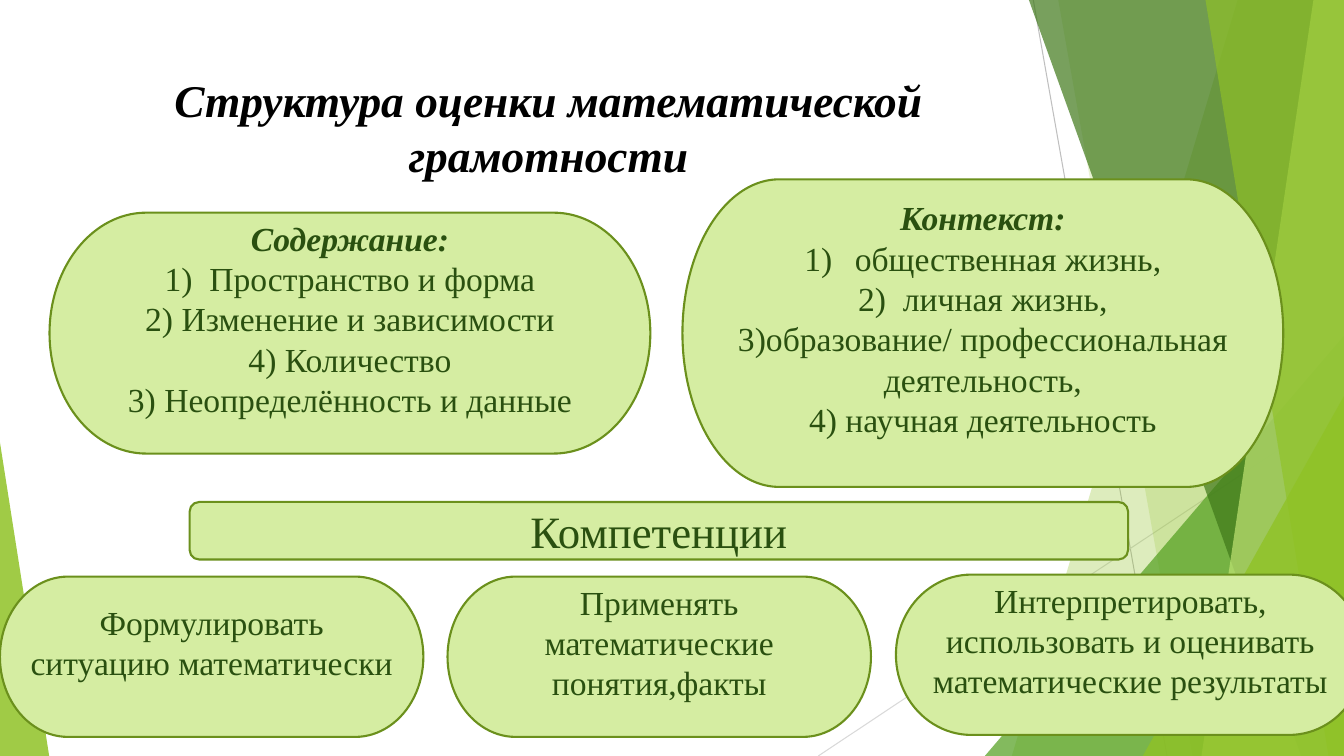
from lxml import etree
from pptx import Presentation
from pptx.dml.color import RGBColor
from pptx.enum import shapes, text
from pptx.oxml.ns import qn
from pptx.util import Cm, Pt

# Content
TITLE = "Структура оценки математической грамотности"
CONTENT = ["Содержание:", "1)  Пространство и форма", "2) Изменение и зависимости",
           "4) Количество", "3) Неопределённость и данные"]
CONTEXT = ["Контекст:", "общественная жизнь,", "2)  личная жизнь,",
           "3)образование/ профессиональная деятельность,", "4) научная деятельность"]
SKILLS = ["Формулировать ситуацию математически",
          "Применять математические понятия,факты",
          "Интерпретировать, использовать и оценивать математические результаты"]

# Geometry in cm
W, H = 33.87, 19.05
PILL = shapes.MSO_SHAPE.FLOWCHART_TERMINATOR
BAR = shapes.MSO_SHAPE.ROUNDED_RECTANGLE
LOW_SPACE = 0.87  # bottom inset that lifts the text in the pills
SKILL_BOXES = [(0, 14.53, 10.67, 4.04), (11.28, 14.53, 10.67, 4.04), (22.58, 14.48, 11.81, 4.04)]
BOXES = [  # preset, box, lines, size, heading, bottom inset
    (PILL, (1.25, 5.36, 15.14, 6.07), CONTENT, 24, True, LOW_SPACE),
    (PILL, (17.2, 4.52, 15.14, 7.75), CONTEXT, 24, True, LOW_SPACE),
    (BAR, (4.78, 12.65, 23.65, 1.45), ["Компетенции"], 32, False, 0.13),
] + [(PILL, box, [skill], 24, False, LOW_SPACE) for box, skill in zip(SKILL_BOXES, SKILLS)]

LINES = [((26.04, 0), (29.41, H), "BFBFBF"), ((W, 10.24), (20.62, H), "D9D9D9")]
# band: top x, bottom x; peak: left, top, width, apex side (0 left, 1 right)
DECOR = [
    ("band", (31.19, 25.5), "90C226", 30),
    ("band", (26.67, 30.05), "90C226", 20),
    ("peak", (24.82, 8.46, 9.05, 1), "54A021", 72),
    ("band", (25.93, 32.79), "3F7819", 70),
    ("band", (33.1, 30.28), "C0E474", 70),
    ("band", (30.38, 33.48), "90C226", 65),
    ("peak", (28.8, 9.98, 5.07, 1), "90C226", 80),
    ("peak", (0, 11.15, 1.24, 0), "90C226", 85),
]


def rgb(value):
    return RGBColor.from_string(value)


def put(obj, **values):
    for name, value in values.items():
        setattr(obj, name, value)


def paint(sp, color, alpha=None):
    sp.shadow.inherit = False
    sp.fill.solid()
    sp.fill.fore_color.rgb = rgb(color)
    if alpha is not None:
        clr = sp.fill._xPr.find(qn("a:solidFill"))[0]
        etree.SubElement(clr, qn("a:alpha")).set("val", str(alpha * 1000))


def write(p, words, size, color, strong):
    p.alignment = text.PP_ALIGN.CENTER
    r = p.add_run()
    r.text = words
    put(r.font, name="Times New Roman", size=Pt(size), bold=strong, italic=strong)
    r.font.color.rgb = rgb(color)


def number(p):
    pPr = p._p.get_or_add_pPr()
    pPr.set("marL", str(Cm(1.27)))
    pPr.set("indent", str(-Cm(1.27)))
    etree.SubElement(pPr, qn("a:buAutoNum")).set("type", "arabicParenR")


prs = Presentation()
put(prs, slide_width=Cm(W), slide_height=Cm(H))
s = prs.slides.add_slide(prs.slide_layouts[5])

# Background lines
for start, end, color in LINES:
    c = s.shapes.add_connector(shapes.MSO_CONNECTOR.STRAIGHT, *map(Cm, start + end))
    c.line.color.rgb = rgb(color)
    c.line.width = Pt(0.75)
    etree.SubElement(c._element.spPr, qn("a:effectLst"))

# Green bands and peaks
for kind, place, color, alpha in DECOR:
    if kind == "band":
        top, bottom = place
        fb = s.shapes.build_freeform(Cm(top), 0)
        fb.add_line_segments([(Cm(x), Cm(y)) for x, y in [(W, 0), (W, H), (bottom, H)]])
        sp = fb.convert_to_shape()
    else:
        left, top, width, apex = place
        sp = s.shapes.add_shape(shapes.MSO_SHAPE.ISOSCELES_TRIANGLE,
                                *map(Cm, (left, top, width, H - top)))
        sp.adjustments[0] = apex
    paint(sp, color, alpha)
    sp.line.fill.background()

# Title
title = s.shapes.title
put(title, left=Cm(1.88), top=Cm(1.7), width=Cm(23.88), height=Cm(3.66))
put(title.text_frame, word_wrap=True, auto_size=text.MSO_AUTO_SIZE.NONE,
    vertical_anchor=text.MSO_ANCHOR.TOP)
write(title.text_frame.paragraphs[0], TITLE, 32.4, "000000", True)

# Text boxes
for preset, box, lines, size, heading, inset in BOXES:
    sp = s.shapes.add_shape(preset, *map(Cm, box))
    paint(sp, "D5EDA2")
    sp.line.color.rgb = rgb("6B901C")
    sp.line.width = Pt(1.5)
    tf = sp.text_frame
    put(tf, word_wrap=True, vertical_anchor=text.MSO_ANCHOR.MIDDLE, margin_bottom=Cm(inset))
    for i, words in enumerate(lines):
        p = tf.paragraphs[0] if i == 0 else tf.add_paragraph()
        write(p, words, size, "2A5010", heading and i == 0)
        if lines is CONTEXT and i == 1:
            number(p)

prs.save("out.pptx")
